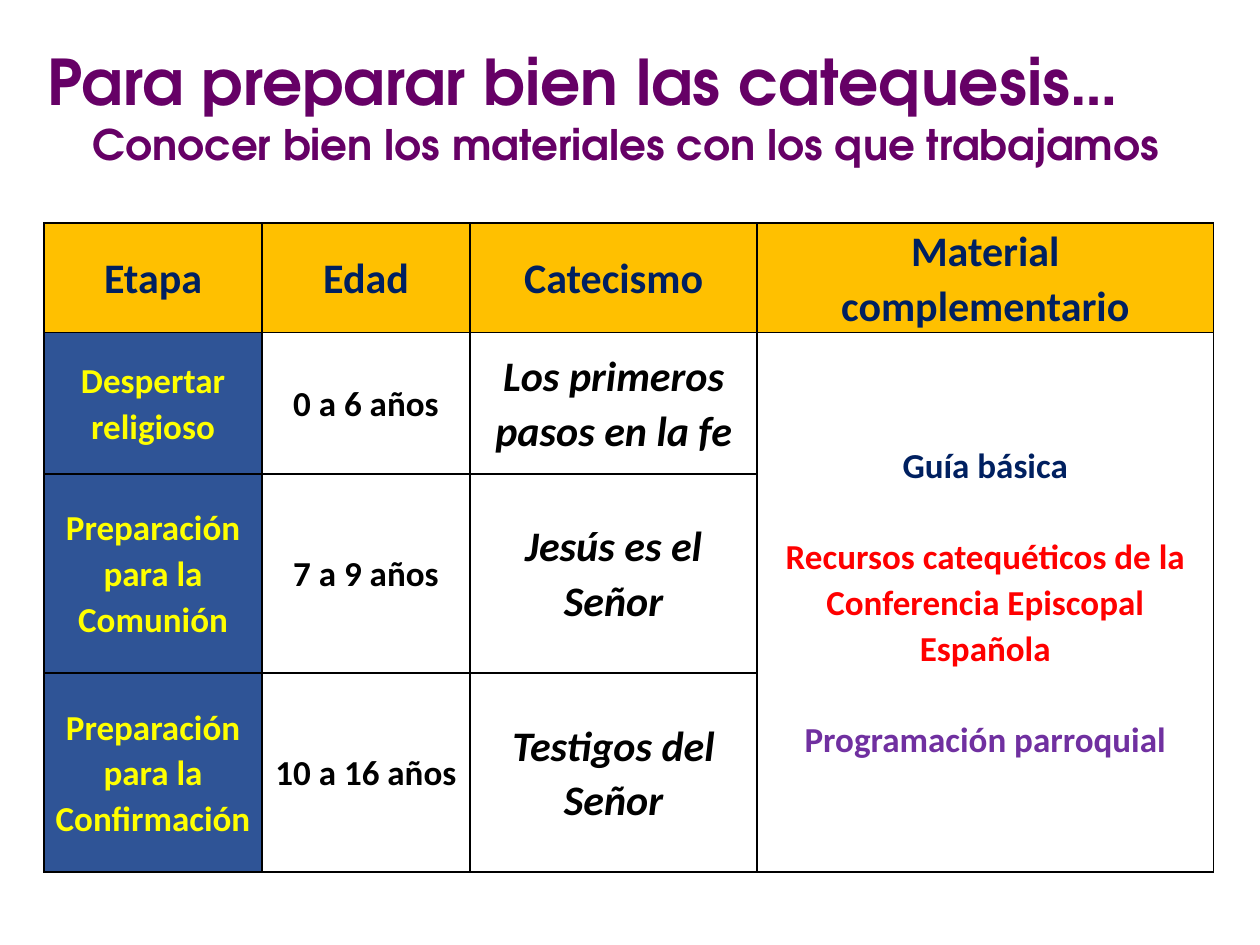
from lxml.etree import fromstring
from pptx import Presentation
from pptx.dml.color import RGBColor
from pptx.enum.text import MSO_ANCHOR, MSO_AUTO_SIZE, PP_ALIGN
from pptx.util import Inches, Pt

NS = "http://schemas.openxmlformats.org/drawingml/2006/main"
NAVY, YELLOW, BLACK, PURPLE = "002060", "FFFF00", "000000", "660066"


def rgb(value):
    return RGBColor.from_string(value)


def write(p, text, size=20, color=BLACK, font="Calibri", italic=False,
          align=PP_ALIGN.CENTER, spacing=1.07, before=0):
    p.alignment = align
    p.line_spacing = spacing
    p.space_before = Pt(before)
    r = p.add_run()
    r.text = text
    r.font.name = font
    r.font.size = Pt(size)
    r.font.bold = True
    r.font.italic = italic
    r.font.color.rgb = rgb(color)


prs = Presentation()
prs.slide_width, prs.slide_height = Inches(10), Inches(7.5)
s = prs.slides.add_slide(prs.slide_layouts[5])

# Title and subtitle
title = s.shapes.title
title.left, title.top = Inches(0.28), Inches(0.29)
title.width, title.height = Inches(9.37), Inches(1.11)
tf = title.text_frame
tf.word_wrap = True
tf.auto_size = MSO_AUTO_SIZE.NONE
tf.vertical_anchor = MSO_ANCHOR.TOP
write(tf.paragraphs[0], "Para preparar bien las catequesis…", size=36, color=PURPLE,
      font="TeX Gyre Adventor", align=PP_ALIGN.LEFT, spacing=1.0)
write(tf.add_paragraph(), "Conocer bien los materiales con los que trabajamos", size=24,
      color=PURPLE, font="TeX Gyre Adventor", spacing=1.0)

# Table grid
widths = [1.73, 1.65, 2.28, 3.62]
heights = [0.84, 1.12, 1.58, 1.58]
table = s.shapes.add_table(len(heights), len(widths), Inches(0.35), Inches(1.77),
                           Inches(sum(widths)), Inches(sum(heights))).table
table.horz_banding = False
table.first_row = False
for col, width in zip(table.columns, widths):
    col.width = Inches(width)
for row, height in zip(table.rows, heights):
    row.height = Inches(height)
table.cell(1, 3).merge(table.cell(3, 3))

# Fills, margins and borders
for i, row in enumerate(table.rows):
    for j, cell in enumerate(row.cells):
        cell.vertical_anchor = MSO_ANCHOR.MIDDLE
        cell.margin_left = cell.margin_right = Inches(0.07)
        cell.margin_top = cell.margin_bottom = 0
        if i == 0 or j == 0:
            cell.fill.solid()
            cell.fill.fore_color.rgb = rgb("FFC000" if i == 0 else "2F5496")
        else:
            cell.fill.background()
        tcPr = cell._tc.get_or_add_tcPr()
        for k, side in enumerate("LRTB"):
            tcPr.insert(k, fromstring(
                f'<a:ln{side} xmlns:a="{NS}" w="12700"><a:solidFill>'
                f'<a:srgbClr val="{BLACK}"/></a:solidFill></a:ln{side}>'))

# Header row
for j, text in enumerate(["Etapa", "Edad", "Catecismo", "Material complementario"]):
    write(table.cell(0, j).text_frame.paragraphs[0], text, size=24, color=NAVY)

# Stage, age and catechism
stages = [
    ("Despertar religioso", "0 a 6 años", "Los primeros pasos en la fe"),
    ("Preparación para la Comunión", "7 a 9 años", "Jesús es el Señor"),
    ("Preparación para la Confirmación", "10 a 16 años", "Testigos del Señor"),
]
formats = [{"color": YELLOW}, {}, {"size": 24, "italic": True}]
for i, stage in enumerate(stages, start=1):
    for j, (text, fmt) in enumerate(zip(stage, formats)):
        write(table.cell(i, j).text_frame.paragraphs[0], text, **fmt)

# Complementary material, shared by all stages
materials = [
    ("Guía básica", NAVY),
    ("Recursos catequéticos de la Conferencia Episcopal Española", "FF0000"),
    ("Programación parroquial", "7030A0"),
]
tf = table.cell(1, 3).text_frame
for k, (text, color) in enumerate(materials):
    p = tf.add_paragraph() if k else tf.paragraphs[0]
    write(p, text, color=color, before=26 if k else 0)

prs.save("out.pptx")
